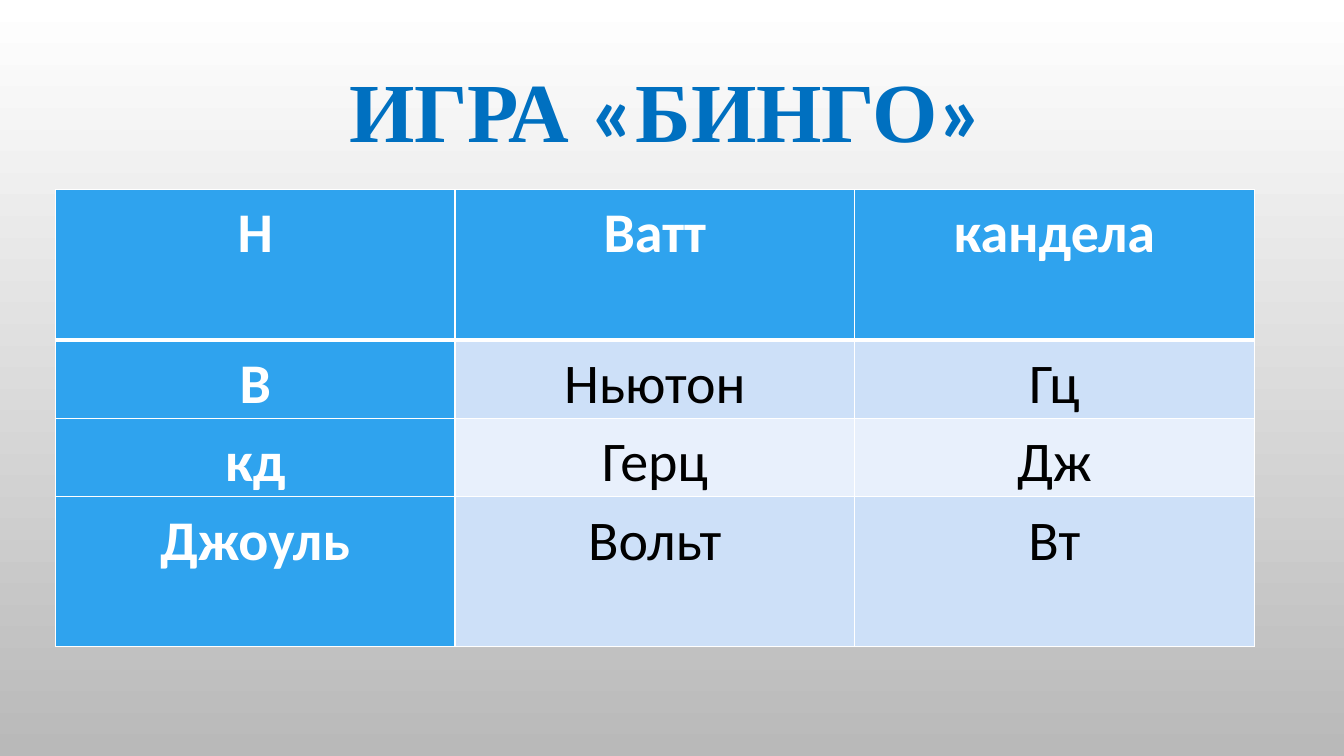
import pptx
import pptx.util
import pptx.dml.color
import pptx.enum.text
import pptx.oxml.ns
import lxml.etree

Inches, Pt = pptx.util.Inches, pptx.util.Pt
CENTER = pptx.enum.text.PP_ALIGN.CENTER
TOP = pptx.enum.text.MSO_ANCHOR.TOP

COLORS = {
    "title": "0070C0", "head": "2FA3EE", "odd": "CDE0F8", "even": "E8F0FC",
    "white": "FFFFFF", "black": "000000", "gray": "B9B9B9",
}
WORDS = [
    ["Н", "Ватт", "кандела"],
    ["В", "Ньютон", "Гц"],
    ["кд", "Герц", "Дж"],
    ["Джоуль", "Вольт", "Вт"],
]
ROWS = [1.49, 0.72, 0.72, 1.49]
TITLE = [("ИГРА ", "Times New Roman"), ("«", "Calibri"),
         ("БИНГО", "Times New Roman"), ("»", "Calibri")]


def color(name):
    return pptx.dml.color.RGBColor.from_string(COLORS[name])


def add_run(para, text, font, size, tint, bold):
    run = para.add_run()
    run.text = text
    run.font.name = font
    run.font.size = Pt(size)
    run.font.bold = bold
    run.font.color.rgb = color(tint)


def paint_back(slide):
    fill = slide.background.fill
    fill.gradient()
    fill.gradient_angle = 270
    for stop, place, name in zip(fill.gradient_stops, (0, 1), ("white", "gray")):
        stop.position = place
        stop.color.rgb = color(name)


def fill_title(slide, left, top, width, height):
    title = slide.shapes.title
    title.left, title.top = Inches(left), Inches(top)
    title.width, title.height = Inches(width), Inches(height)
    frame = title.text_frame
    frame.word_wrap = True
    frame.vertical_anchor = TOP
    frame.margin_left = Inches(0.31)
    para = frame.paragraphs[0]
    para.alignment = CENTER
    for text, font in TITLE:
        add_run(para, text, font, 60, "title", True)


def set_edges(cell, widths):
    """Draw white borders; widths are in points for left, right, top, bottom."""
    props = cell._tc.get_or_add_tcPr()
    qn = pptx.oxml.ns.qn
    for spot, (side, width) in enumerate(zip("LRTB", widths)):
        line = lxml.etree.Element(qn(f"a:ln{side}"), w=str(Pt(width)))
        solid = lxml.etree.SubElement(line, qn("a:solidFill"))
        lxml.etree.SubElement(solid, qn("a:srgbClr"), val=COLORS["white"])
        props.insert(spot, line)


def fill_cell(cell, text, row, col):
    head = row == 0 or col == 0
    cell.margin_left = cell.margin_right = Inches(0.07)
    cell.margin_top = cell.margin_bottom = 0
    cell.vertical_anchor = TOP
    cell.fill.solid()
    cell.fill.fore_color.rgb = color("head" if head else "odd" if row % 2 else "even")
    set_edges(cell, (1, 1, 3 if row == 1 else 1, 3 if row == 0 else 1))
    para = cell.text_frame.paragraphs[0]
    para.alignment = CENTER
    para.line_spacing = 1.15
    add_run(para, text, "Calibri", 40, "white" if head else "black", head)


def add_bingo(slide, left, top, width):
    count = len(WORDS[0])
    frame = slide.shapes.add_table(
        len(WORDS), count, Inches(left), Inches(top),
        Inches(width), Inches(sum(ROWS)))
    table = frame.table
    for col in table.columns:
        col.width = Inches(width / count)
    for row, (height, words) in enumerate(zip(ROWS, WORDS)):
        table.rows[row].height = Inches(height)
        for col, text in enumerate(words):
            fill_cell(table.cell(row, col), text, row, col)


def main():
    deck = pptx.Presentation()
    deck.slide_width, deck.slide_height = Inches(13.33), Inches(7.5)
    slide = deck.slides.add_slide(deck.slide_layouts[5])
    paint_back(slide)
    add_bingo(slide, 0.55, 1.88, 11.89)
    fill_title(slide, 2.47, 0.53, 8.07, 1.92)
    deck.save("out.pptx")


if __name__ == "__main__":
    main()
